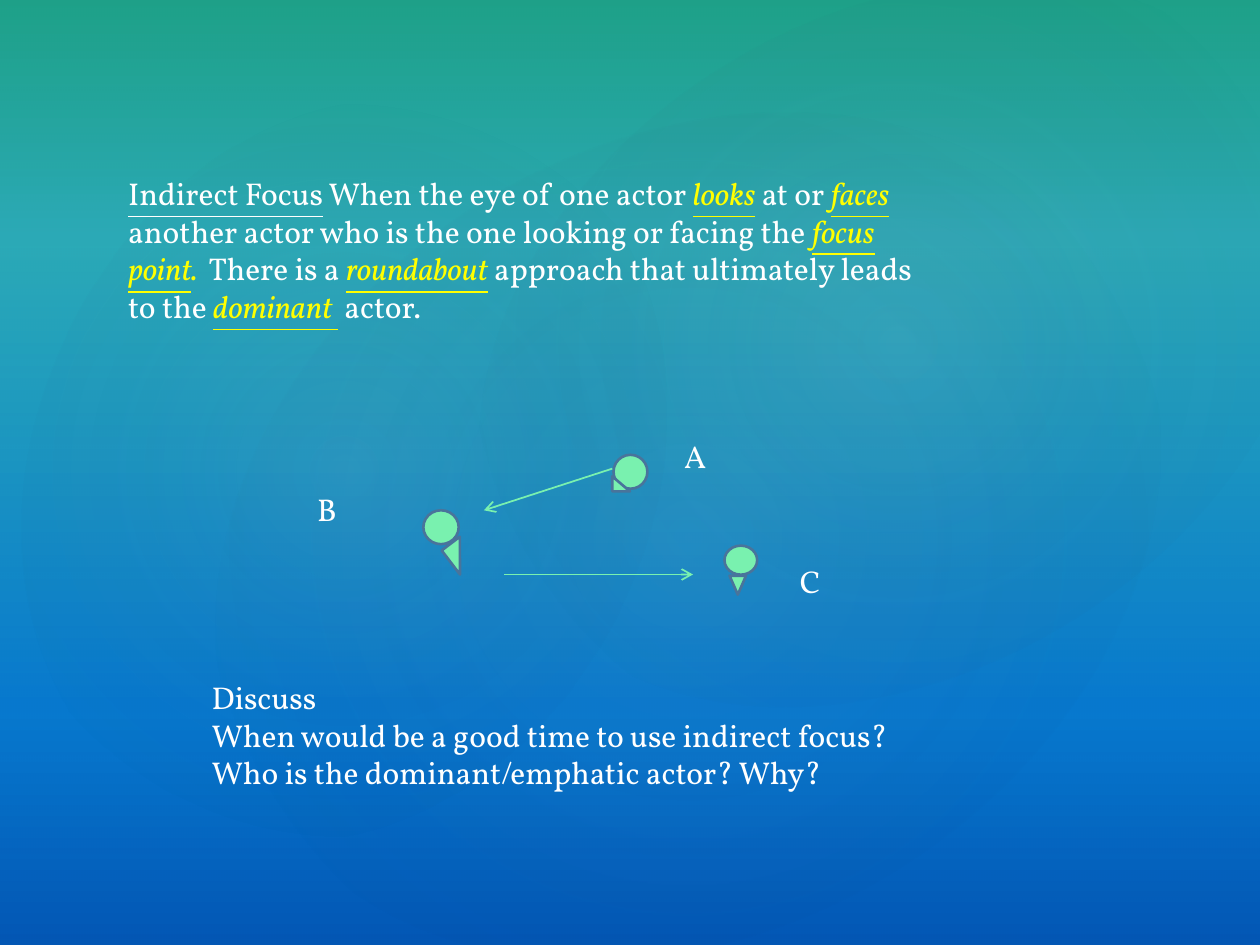
from dataclasses import dataclass

from lxml.etree import SubElement
from pptx import Presentation
from pptx.dml.color import RGBColor
from pptx.enum.shapes import MSO_CONNECTOR, MSO_SHAPE
from pptx.enum.text import MSO_AUTO_SIZE
from pptx.oxml.ns import qn
from pptx.util import Pt


@dataclass(frozen=True)
class Theme:
    font: str = "Vollkorn"
    size: float = 18
    text: str = "FFFFFF"
    key: str = "FFFF00"
    actor: str = "79F1AF"
    outline: str = "49749B"
    outline_width: float = 1.5
    arrow_width: float = 1
    # Gradient stops: position %, colour, opacity %
    sky: tuple = ((0, "03D4A8", 100), (25, "21D6E0", 100),
                  (75, "0087E6", 100), (100, "005CBF", 100))
    veil: tuple = ((0, "504652", 36), (100, "242852", 10))
    glow: str = "C4BCC6"
    glow_edge: str = "242852"


THEME = Theme()
WIDTH, HEIGHT = 720, 540

# Run styles: colour, italic, underline
PLAIN = (THEME.text, False, False)
TITLE = (THEME.text, False, True)
KEY = (THEME.key, True, True)
KEY_END = (THEME.key, True, False)

DEFINITION = [
    ("Indirect Focus", TITLE), (" When the eye of one actor ", PLAIN),
    ("looks", KEY), (" at or ", PLAIN), ("faces", KEY), (" ", KEY_END),
    ("another actor who is the one looking or facing the ", PLAIN),
    ("focus point", KEY), (".  ", KEY_END), ("There is a ", PLAIN),
    ("roundabout", KEY), (" approach that ultimately leads to the ", PLAIN),
    ("dominant ", KEY), (" actor.", PLAIN),
]
QUESTIONS = [
    "Discuss",
    "When would be a good time to use indirect focus?",
    "Who is the dominant/emphatic actor? Why?",
]

# Soft glows: frame, rotation, centre opacity
GLOWS = [
    ((108, 82.1, 570.2, 449.3), 328.7, 7),
    ((-21.6, 92.2, 436.3, 352.8), 294.3, 8),
    ((257.8, 9.4, 510.5, 374.4), 328.7, 8),
]

# Actors: head frame, nose kind, nose frame, nose rotation, letter, letter frame
ACTORS = [
    ((350.6, 259.9, 19.4, 19.4), MSO_SHAPE.RIGHT_TRIANGLE,
     (349.9, 272.2, 10.1, 8.6), 0, "A", (383.8, 246.2, 33.1, 28.8)),
    ((241.9, 291.6, 20.2, 19.4), MSO_SHAPE.RIGHT_TRIANGLE,
     (254.2, 311, 17.3, 13), 52.8, "B", (174.2, 276.5, 41.8, 28.8)),
    ((414, 311.8, 18.7, 16.6), MSO_SHAPE.ISOSCELES_TRIANGLE,
     (416.9, 329, 9.4, 10.8), 180, "C", (450, 317.5, 36, 28.8)),
]
SIGHT_LINES = [(349.9, 267.8, 276.5, 291.6), (288, 328.3, 396, 328.3)]


def points(values):
    return [Pt(value) for value in values]


def paint_gradient(fill, owner, stops, radial=False):
    """Give a fill any number of stops, with opacity."""
    fill.gradient()
    gradient = owner.xpath(".//a:gradFill")[0]
    for child in list(gradient):
        gradient.remove(child)
    stop_list = SubElement(gradient, qn("a:gsLst"))
    for position, color, opacity in stops:
        stop = SubElement(stop_list, qn("a:gs"), pos=str(position * 1000))
        tint = SubElement(stop, qn("a:srgbClr"), val=color)
        if opacity < 100:
            SubElement(tint, qn("a:alpha"), val=str(opacity * 1000))
    if radial:
        shade = SubElement(gradient, qn("a:path"), path="circle")
        SubElement(shade, qn("a:fillToRect"),
                   {side: "50000" for side in "ltrb"})
    else:
        SubElement(gradient, qn("a:lin"), ang="5400000", scaled="0")


def add_shape(page, kind, frame, rotation=0):
    shape = page.shapes.add_shape(kind, *points(frame))
    shape.rotation = rotation
    shape.shadow.inherit = False
    return shape


def add_haze(page, kind, frame, stops, rotation=0, radial=False):
    shape = add_shape(page, kind, frame, rotation)
    paint_gradient(shape.fill, shape._element, stops, radial)
    shape.line.fill.background()


def add_actor_part(page, kind, frame, rotation=0):
    shape = add_shape(page, kind, frame, rotation)
    shape.fill.solid()
    shape.fill.fore_color.rgb = RGBColor.from_string(THEME.actor)
    shape.line.color.rgb = RGBColor.from_string(THEME.outline)
    shape.line.width = Pt(THEME.outline_width)


def add_arrow(page, ends):
    arrow = page.shapes.add_connector(MSO_CONNECTOR.STRAIGHT, *points(ends))
    arrow.line.color.rgb = RGBColor.from_string(THEME.actor)
    arrow.line.width = Pt(THEME.arrow_width)
    SubElement(arrow.line._get_or_add_ln(), qn("a:tailEnd"), type="arrow")
    SubElement(arrow._element.spPr, qn("a:effectLst"))


def add_text(page, frame, paragraphs):
    """Each paragraph is a list of (text, style) runs."""
    box = page.shapes.add_textbox(*points(frame))
    text_frame = box.text_frame
    text_frame.word_wrap = True
    text_frame.auto_size = MSO_AUTO_SIZE.SHAPE_TO_FIT_TEXT
    for index, runs in enumerate(paragraphs):
        para = text_frame.add_paragraph() if index else text_frame.paragraphs[0]
        for text, (color, italic, underline) in runs:
            span = para.add_run()
            span.text = text
            span.font.name = THEME.font
            span.font.size = Pt(THEME.size)
            span.font.color.rgb = RGBColor.from_string(color)
            span.font.italic = italic
            span.font.underline = underline


def main():
    deck = Presentation()
    deck.slide_width, deck.slide_height = Pt(WIDTH), Pt(HEIGHT)
    page = deck.slides.add_slide(deck.slide_layouts[6])

    # Backdrop
    paint_gradient(page.background.fill, page._element, THEME.sky)
    add_haze(page, MSO_SHAPE.RECTANGLE, (0, 0, WIDTH, HEIGHT), THEME.veil)
    for frame, rotation, opacity in GLOWS:
        stops = ((0, THEME.glow, opacity), (58, THEME.glow_edge, 0))
        add_haze(page, MSO_SHAPE.OVAL, frame, stops, rotation, radial=True)

    # Definition
    add_text(page, (66.2, 95.8, 473.8, 94.3), [DEFINITION])

    # Actors and where they look
    for head, nose_kind, nose, rotation, letter, letter_frame in ACTORS:
        add_actor_part(page, MSO_SHAPE.OVAL, head)
        add_actor_part(page, nose_kind, nose, rotation)
        add_text(page, letter_frame, [[(letter, PLAIN)]])
    for ends in SIGHT_LINES:
        add_arrow(page, ends)

    # Discussion
    add_text(page, (113.8, 383.8, 401.8, 94.3),
             [[(question, PLAIN)] for question in QUESTIONS])

    deck.save("out.pptx")


if __name__ == "__main__":
    main()
